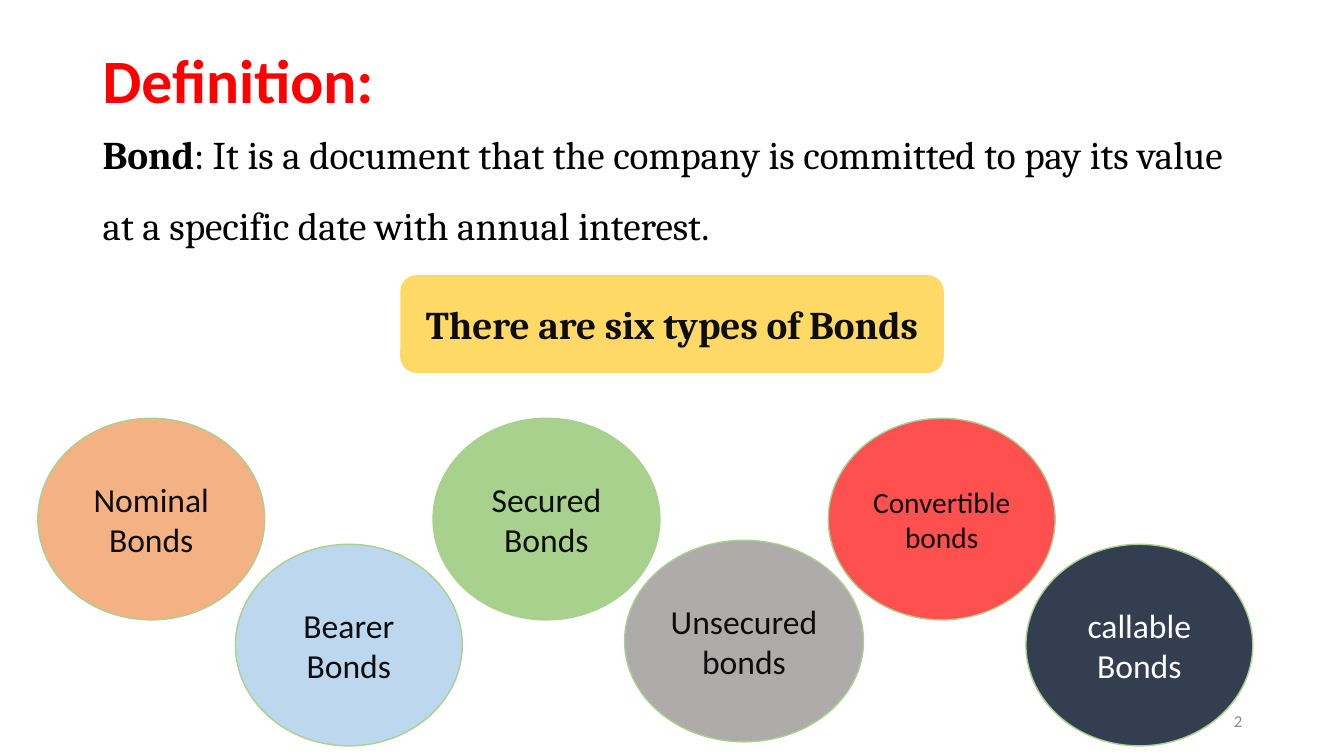
from pptx import Presentation
from pptx.dml.color import RGBColor
from pptx.enum.shapes import MSO_SHAPE
from pptx.enum.text import MSO_ANCHOR, PP_ALIGN
from pptx.util import Inches, Pt

OVAL = MSO_SHAPE.OVAL
ROUNDED = MSO_SHAPE.ROUNDED_RECTANGLE
TOP, MIDDLE = MSO_ANCHOR.TOP, MSO_ANCHOR.MIDDLE
LEFT, CENTER, RIGHT = PP_ALIGN.LEFT, PP_ALIGN.CENTER, PP_ALIGN.RIGHT


def color(value):
    return RGBColor.from_string(value)


def write(box, spans, size, font, ink, align, anchor=MIDDLE):
    frame = box.text_frame
    frame.word_wrap = True
    frame.vertical_anchor = anchor
    para = frame.paragraphs[0]
    para.alignment = align
    for text, bold in spans:
        span = para.add_run()
        span.text = text
        span.font.size = Pt(size)
        span.font.name = font
        span.font.bold = bold
        span.font.color.rgb = color(ink)
    return para


deck = Presentation()
deck.slide_width = Inches(13.33)
deck.slide_height = Inches(7.5)
page = deck.slides.add_slide(deck.slide_layouts[6])

title = page.shapes.add_textbox(Inches(0.92), Inches(0.1), Inches(11.5), Inches(1.45))
para = write(title, [("Definition:", True)], 44, "Calibri", "FF0000", LEFT)
para.line_spacing = 0.9

definition = page.shapes.add_textbox(Inches(0.92), Inches(1.01), Inches(11.5), Inches(4.76))
definition_spans = [
    ("Bond", True),
    (": It is a document that the company is committed to pay its value "
     "at a specific date with annual interest.", False),
]
para = write(definition, definition_spans, 28, "Cambria", "000000", LEFT, TOP)
para.line_spacing = 1.5
para.space_before = Pt(10)

number = page.shapes.add_textbox(Inches(9.42), Inches(6.95), Inches(3), Inches(0.4))
write(number, [("2", False)], 12, "Calibri", "8C8C8C", RIGHT)

banner = page.shapes.add_shape(ROUNDED, Inches(3.97), Inches(2.73), Inches(5.39), Inches(0.97))
banner.shadow.inherit = False
banner.fill.solid()
banner.fill.fore_color.rgb = color("FFD966")
banner.line.fill.background()
write(banner, [("There are six types of Bonds", True)], 28, "Cambria", "0D0D0D", CENTER)

bonds = [
    ("Nominal Bonds", "F4B183", "0D0D0D", 24, 4.15, 2.25),
    ("Bearer Bonds", "BDD7EE", "0D0D0D", 24, 5.4, 2.25),
    ("Secured Bonds", "A9D18E", "0D0D0D", 24, 4.15, 2.25),
    ("Unsecured bonds", "AFABAB", "0D0D0D", 24, 5.36, 2.37),
    ("Convertible bonds", "FF5050", "0D0D0D", 21, 4.15, 2.25),
    ("callable Bonds", "333F50", "FFFFFF", 24, 5.4, 2.25),
]
first_center, center_step = 1.5, 1.96
for index, (name, fill, ink, size, top, width) in enumerate(bonds):
    left = first_center + index * center_step - width / 2
    bond = page.shapes.add_shape(OVAL, Inches(left), Inches(top), Inches(width), Inches(2))
    bond.shadow.inherit = False
    bond.fill.solid()
    bond.fill.fore_color.rgb = color(fill)
    bond.line.color.rgb = color("A9D18E")
    bond.line.width = Pt(1)
    write(bond, [(name, False)], size, "Calibri", ink, CENTER)

deck.save("out.pptx")
